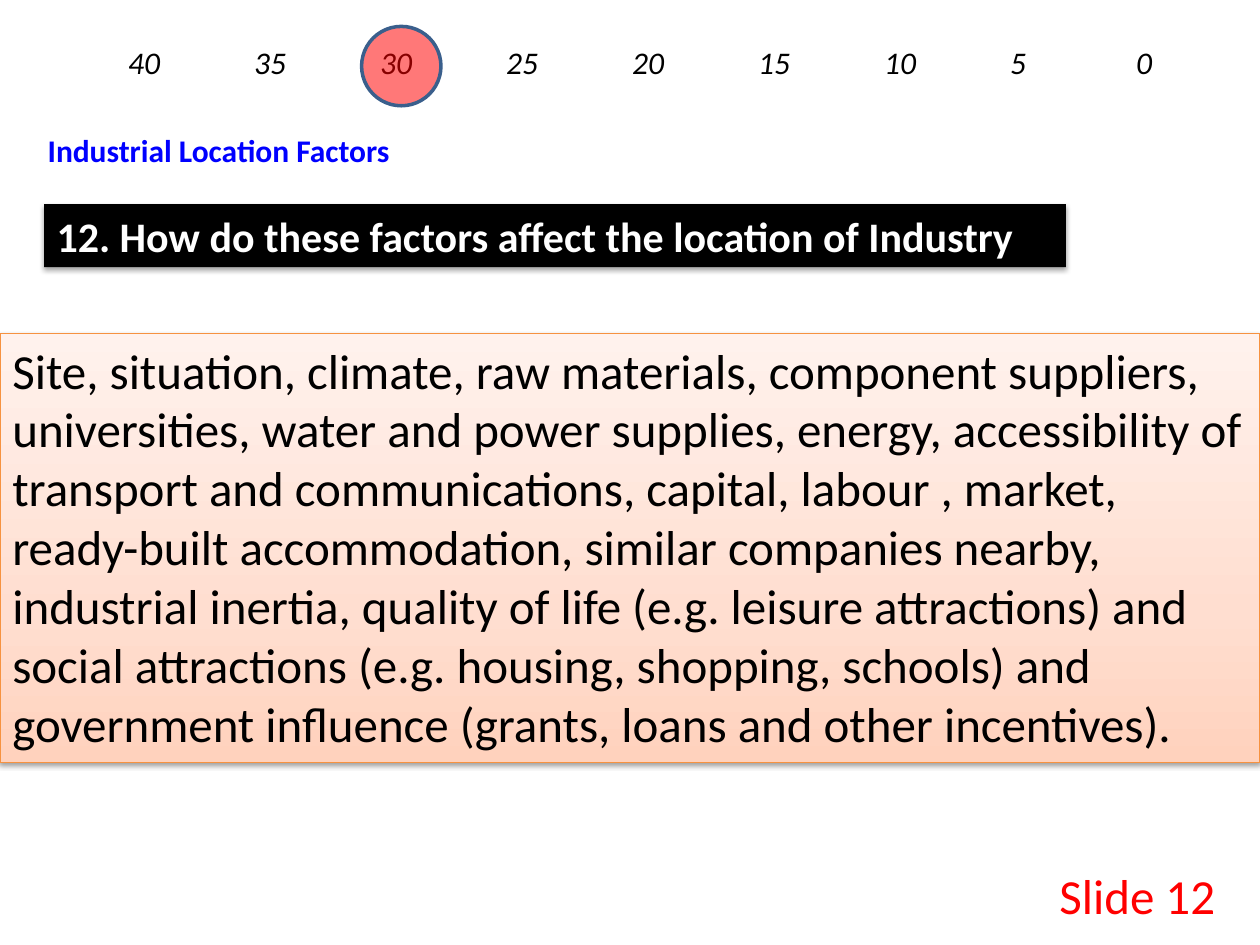
from lxml import etree
from pptx import Presentation
from pptx import util as u
from pptx.dml.color import RGBColor
from pptx.enum import shapes, text
from pptx.oxml.ns import qn

# Content
SCORES = ["40", "35", "30", "25", "20", "15", "10", "5", "0"]
TOPIC = "Industrial Location Factors"
QUESTION = "12. How do these factors affect the location of Industry"
ANSWER = (
    "Site, situation, climate, raw materials, component suppliers, universities, "
    "water and power supplies, energy, accessibility of transport and communications, "
    "capital, labour , market, ready-built accommodation, similar companies nearby, "
    "industrial inertia, quality of life (e.g. leisure attractions) and social "
    "attractions (e.g. housing, shopping, schools) and government influence "
    "(grants, loans and other incentives)."
)
SLIDE_LABEL = "Slide 12"

THEME = {
    "font": "Calibri",
    "black": "000000", "white": "FFFFFF", "red": "FF0000", "blue": "0000FF",
    "ring": "3A5F8C", "panel_line": "F69240",
    "panel_stops": [(0, "FFD2BD"), (35, "FFDED0"), (100, "FFF2ED")],
    "small": 18, "heading": 24, "large": 28,
}
TAB_STEP = 1


def add_child(parent, tag, **attributes):
    values = {name: str(value) for name, value in attributes.items()}
    return etree.SubElement(parent, qn(tag), values)


def add_color(parent, color, opacity=None):
    element = add_child(parent, "a:srgbClr", val=color)
    if opacity is not None:
        add_child(element, "a:alpha", val=opacity * 1000)


def write(shape, content, size, color, bold=None, italic=None, align=None, tabs=()):
    frame = shape.text_frame
    frame.word_wrap = True
    frame.auto_size = text.MSO_AUTO_SIZE.SHAPE_TO_FIT_TEXT
    frame.vertical_anchor = text.MSO_ANCHOR.TOP
    paragraph = frame.paragraphs[0]
    paragraph.text = content
    paragraph.alignment = align or text.PP_ALIGN.LEFT
    if tabs:
        tab_list = add_child(paragraph._p.get_or_add_pPr(), "a:tabLst")
        for position in tabs:
            add_child(tab_list, "a:tab", pos=u.Inches(position), algn="l")
    for run in paragraph.runs:
        font = run.font
        font.name, font.size = THEME["font"], u.Pt(THEME[size])
        font.bold, font.italic = bold, italic
        font.color.rgb = RGBColor.from_string(THEME[color])


def add_box(slide, box, *content, **style):
    shape = slide.shapes.add_textbox(*map(u.Inches, box))
    write(shape, *content, **style)


def add_preset(slide, kind, box, fill=None, line=None, width=0):
    shape = slide.shapes.add_shape(kind, *map(u.Inches, box))
    shape.shadow.inherit = False
    if fill:
        shape.fill.solid()
        shape.fill.fore_color.rgb = RGBColor.from_string(THEME[fill])
    if line:
        shape.line.color.rgb = RGBColor.from_string(THEME[line])
        shape.line.width = u.Pt(width)
    else:
        shape.line.fill.background()
    return shape


def add_shadow(shape, distance, opacity):
    effects = shape._element.spPr.find(qn("a:effectLst"))
    shadow = add_child(effects, "a:outerShdw", blurRad=u.Pt(3.1), dist=u.Pt(distance),
                       dir=90 * 60000, rotWithShape=0)
    add_color(shadow, THEME["black"], opacity)


def set_gradient(shape, stops):
    shape.fill.gradient()
    shape.fill.gradient_angle = 90
    stop_list = shape._element.spPr.find(".//" + qn("a:gsLst"))
    for old_stop in list(stop_list):
        stop_list.remove(old_stop)
    for position, color in stops:
        add_color(add_child(stop_list, "a:gs", pos=position * 1000), color)


def main():
    presentation = Presentation()
    presentation.slide_width, presentation.slide_height = u.Inches(10), u.Inches(7.5)
    slide = presentation.slides.add_slide(presentation.slide_layouts[6])

    # Slide label and score scale
    add_box(slide, (8.31, 6.82, 1.59, 0.57), SLIDE_LABEL, "large", "red")
    add_box(slide, (0.67, 0.29, 8.82, 0.4), "\t".join(SCORES), "small", "black",
            italic=True, align=text.PP_ALIGN.CENTER,
            tabs=[TAB_STEP * index for index in range(1, len(SCORES))])

    # Ring over the current score
    ring = add_preset(slide, shapes.MSO_SHAPE.OVAL, (2.87, 0.21, 0.63, 0.63),
                      "red", "ring", 2)
    ring_color = ring._element.spPr.find(qn("a:solidFill"))[0]
    add_child(ring_color, "a:alpha", val=53000)

    # Topic
    add_box(slide, (0.28, 0.99, 4.17, 0.4), TOPIC, "small", "blue", bold=True)

    # Answer panel
    panel = add_preset(slide, shapes.MSO_SHAPE.RECTANGLE, (0, 2.65, 10, 3.4),
                       line="panel_line", width=0.75)
    set_gradient(panel, THEME["panel_stops"])
    add_shadow(panel, 1.6, 38)
    write(panel, ANSWER, "large", "black")

    # Question bar
    bar = add_preset(slide, shapes.MSO_SHAPE.RECTANGLE, (0.35, 1.62, 8.11, 0.5), "black")
    add_shadow(bar, 1.8, 35)
    write(bar, QUESTION, "heading", "white", bold=True)

    presentation.save("out.pptx")


if __name__ == "__main__":
    main()
